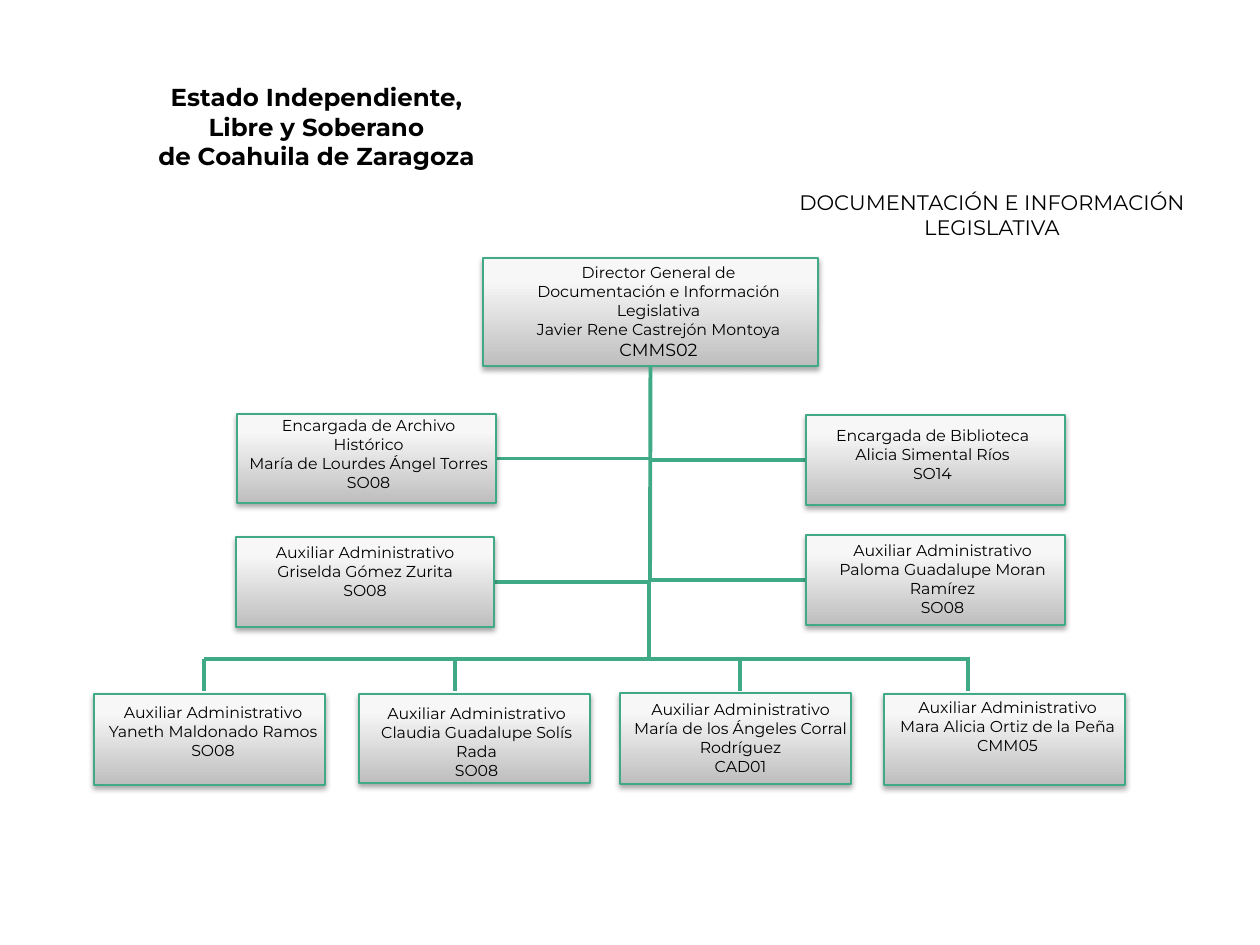
"""Builds the organisation chart of the legislative documentation office."""
from copy import deepcopy

from lxml import etree
from pptx import Presentation
from pptx.dml.color import RGBColor
from pptx.enum.shapes import MSO_CONNECTOR, MSO_SHAPE
from pptx.enum.text import MSO_ANCHOR, MSO_AUTO_SIZE, PP_ALIGN
from pptx.oxml.ns import qn
from pptx.util import Emu, Pt

STRAIGHT = MSO_CONNECTOR.STRAIGHT
RECTANGLE = MSO_SHAPE.RECTANGLE
TOP = MSO_ANCHOR.TOP
CENTER = PP_ALIGN.CENTER
NO_AUTOFIT = MSO_AUTO_SIZE.NONE
BOTTOM_SIDE, LEFT_SIDE, RIGHT_SIDE = 2, 1, 3

BLACK = RGBColor(0x00, 0x00, 0x00)
GREEN = RGBColor(0x40, 0xAA, 0x87)
GRADIENT = [
    (0, RGBColor(0xBE, 0xBE, 0xBE)),
    (0.8, RGBColor(0xF7, 0xF7, 0xF7)),
    (1, RGBColor(0xF8, 0xF8, 0xF8)),
]
FONT = "Montserrat"
PX = 914400 / 126

TITLE = ["Estado Independiente, Libre y Soberano", "de Coahuila de Zaragoza"]
TITLE_AREA = (123, 76, 387, 131)
OFFICE = ["DOCUMENTACIÓN E INFORMACIÓN LEGISLATIVA"]
OFFICE_AREA = (748, 183, 488, 63)

ASSISTANT = "Auxiliar Administrativo"
DIRECTOR = (
    (483, 258, 335, 108), (514, 257, 289, 131),
    ["Director General de Documentación e Información Legislativa",
     "Javier Rene Castrejón Montoya", "CMMS02"],
)
LEFT_STAFF = [
    ((237, 414, 259, 89), (233, 410, 271, 146),
     ["Encargada de Archivo Histórico", "María de Lourdes Ángel Torres", "SO08"]),
    ((236, 537, 258, 90), None,
     [ASSISTANT, "Griselda Gómez Zurita", "SO08"]),
]
RIGHT_STAFF = [
    ((806, 415, 259, 90), (821, 420, 223, 108),
     ["Encargada de Biblioteca", "Alicia Simental Ríos", "SO14"]),
    ((806, 535, 259, 90), (818, 535, 249, 89),
     [ASSISTANT, "Paloma Guadalupe Moran Ramírez", "SO08"]),
]
BOTTOM_STAFF = [
    ((94, 694, 231, 91), (94, 697, 238, 127),
     [ASSISTANT, "Yaneth Maldonado Ramos", "SO08"]),
    ((359, 694, 231, 89), (353, 698, 247, 89),
     [ASSISTANT, "Claudia Guadalupe Solís Rada", "SO08"]),
    ((620, 693, 231, 91), (620, 694, 241, 89),
     [ASSISTANT, "María de los Ángeles Corral Rodríguez", "CAD01"]),
    ((884, 694, 241, 91), (859, 692, 297, 71),
     [ASSISTANT, "Mara Alicia Ortiz de la Peña", "CMM05"]),
]
TRUNK_X, TRUNK_END = 650, 582
BUS_Y, BUS_LEFT, BUS_RIGHT = 659, 204, 970
DROP_XS, DROP_END = [204, 455, 740, 968], 691


def emu(*lengths):
    return [Emu(round(length * PX)) for length in lengths]


def write_text(box, lines, size=9, bold=False, last_size=None):
    frame = box.text_frame
    frame.word_wrap = True
    frame.auto_size = NO_AUTOFIT
    frame.vertical_anchor = TOP
    for index, line in enumerate(lines):
        para = frame.paragraphs[0] if index == 0 else frame.add_paragraph()
        para.alignment = CENTER
        span = para.add_run()
        span.text = line
        is_last = index == len(lines) - 1
        span.font.size = Pt(last_size if last_size and is_last else size)
        span.font.name = FONT
        span.font.bold = bold
        span.font.color.rgb = BLACK


def add_shadow(box):
    box.shadow.inherit = False
    effects = box._element.spPr.find(qn("a:effectLst"))
    shadow = etree.SubElement(effects, qn("a:outerShdw"), blurRad="40000",
                              dist="23000", dir="5400000", rotWithShape="0")
    color = etree.SubElement(shadow, qn("a:srgbClr"), val="000000")
    etree.SubElement(color, qn("a:alpha"), val="35000")


def add_card(page, area):
    card = page.shapes.add_shape(RECTANGLE, *emu(*area))
    card.fill.gradient()
    card.fill.gradient_angle = 90
    stop_list = card._element.spPr.find(".//" + qn("a:gsLst"))
    stop_list.append(deepcopy(stop_list[-1]))
    for stop, (position, color) in zip(card.fill.gradient_stops, GRADIENT):
        stop.position = position
        stop.color.rgb = color
    card.line.color.rgb = GREEN
    card.line.width = Pt(0.75)
    add_shadow(card)
    return card


def add_person(page, person, **text_format):
    area, label_area, lines = person
    card = add_card(page, area)
    label = page.shapes.add_textbox(*emu(*label_area)) if label_area else card
    write_text(label, lines, **text_format)
    return card


def add_line(page, x1, y1, x2, y2):
    line = page.shapes.add_connector(STRAIGHT, *emu(x1, y1, x2, y2))
    line.line.color.rgb = GREEN
    line.line.width = Pt(2.25)
    etree.SubElement(line._element.spPr, qn("a:effectLst"))
    return line


def add_branch(page, person, side):
    left, top, width, height = person[0]
    middle = top + height / 2
    edge = left if side == LEFT_SIDE else left + width
    branch = add_line(page, TRUNK_X, middle, edge, middle)
    branch.end_connect(add_person(page, person), side)


def main():
    deck = Presentation()
    deck.slide_width, deck.slide_height = emu(1260, 945)
    page = deck.slides.add_slide(deck.slide_layouts[5])

    title = page.shapes.title
    title.left, title.top, title.width, title.height = emu(*TITLE_AREA)
    write_text(title, TITLE, size=14, bold=True)
    write_text(page.shapes.add_textbox(*emu(*OFFICE_AREA)), OFFICE, size=12)

    director = add_person(page, DIRECTOR, last_size=10)
    director_bottom = DIRECTOR[0][1] + DIRECTOR[0][3]
    trunk = add_line(page, TRUNK_X, director_bottom, TRUNK_X, TRUNK_END)
    trunk.begin_connect(director, BOTTOM_SIDE)
    add_line(page, TRUNK_X - 1, TRUNK_END, TRUNK_X - 1, BUS_Y)

    for side, staff in [(RIGHT_SIDE, LEFT_STAFF), (LEFT_SIDE, RIGHT_STAFF)]:
        for person in staff:
            add_branch(page, person, side)

    add_line(page, BUS_LEFT, BUS_Y, BUS_RIGHT, BUS_Y)
    for x in DROP_XS:
        add_line(page, x, BUS_Y, x, DROP_END)
    for person in BOTTOM_STAFF:
        add_person(page, person)

    deck.save("out.pptx")


if __name__ == "__main__":
    main()
